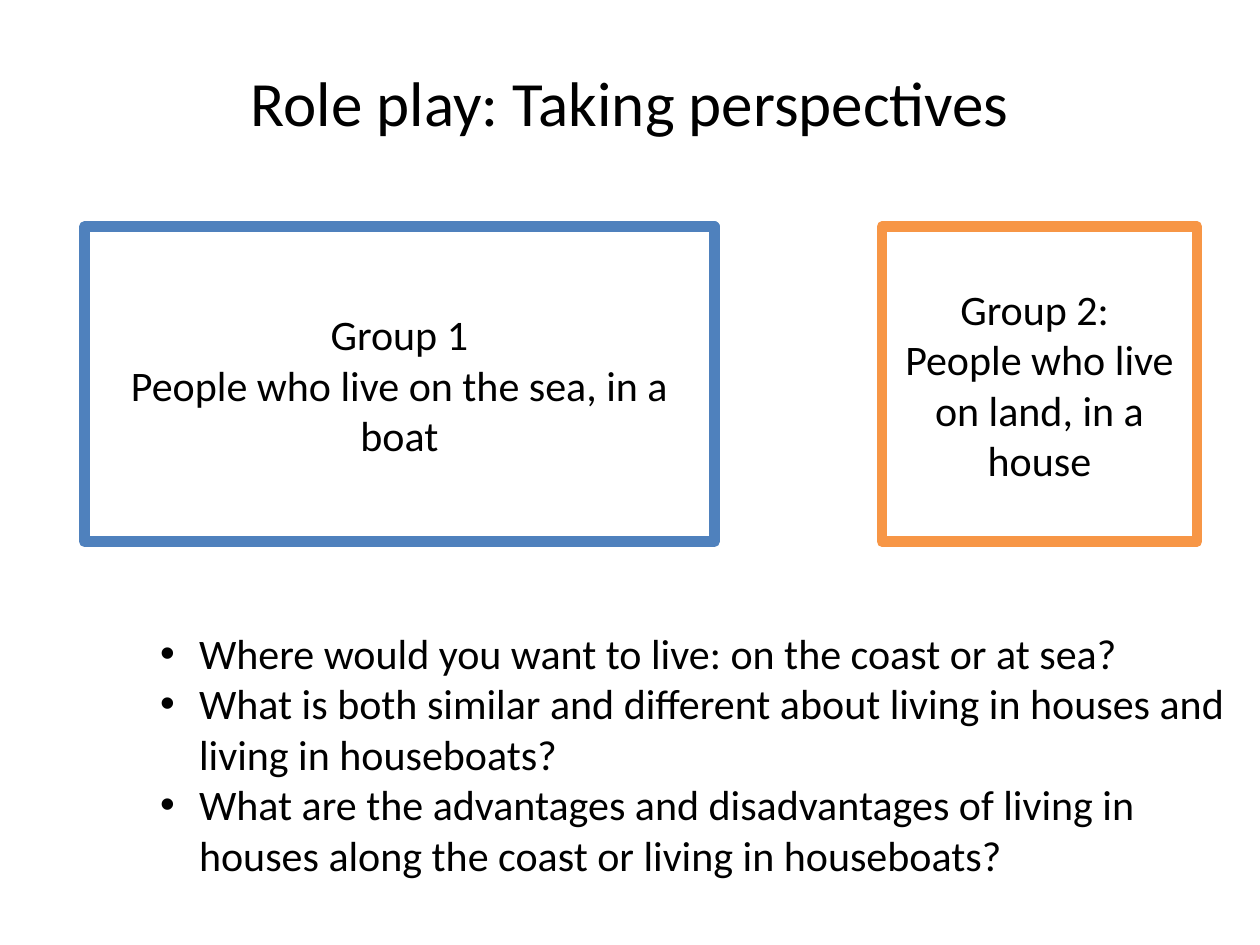
from lxml.etree import SubElement
from pptx import Presentation
from pptx.dml.color import RGBColor
from pptx.enum.shapes import MSO_SHAPE
from pptx.enum.text import MSO_ANCHOR, MSO_AUTO_SIZE, PP_ALIGN
from pptx.oxml.ns import qn
from pptx.util import Inches, Pt

BLACK = RGBColor(0x00, 0x00, 0x00)
WHITE = RGBColor(0xFF, 0xFF, 0xFF)
BLUE = RGBColor(0x4F, 0x81, 0xBD)
ORANGE = RGBColor(0xF7, 0x96, 0x46)

LEFT = Inches(0.67)
BOX_TOP = Inches(1.8)
BOX_SIDE = Inches(2.5)

GROUPS = [
    (LEFT, 2 * BOX_SIDE, BLUE,
     ["Group 1", "People who live on the sea, in a boat"]),
    (Inches(7), BOX_SIDE, ORANGE,
     ["Group 2: ", "People who live on land, in a house"]),
]
QUESTIONS = [
    "Where would you want to live: on the coast or at sea?",
    "What is both similar and different about living in houses and living in houseboats?",
    "What are the advantages and disadvantages of living in houses along the coast "
    "or living in houseboats?",
]


def place(sp, left, top, width, height):
    sp.left, sp.top, sp.width, sp.height = left, top, width, height


def write(tf, lines, size, align):
    """Fill a text frame with one paragraph per line."""
    tf.word_wrap = True
    tf.auto_size = MSO_AUTO_SIZE.NONE
    for i, line in enumerate(lines):
        p = tf.paragraphs[0] if i == 0 else tf.add_paragraph()
        p.alignment = align
        p.space_before = Pt(0)
        r = p.add_run()
        r.text = line
        r.font.name = "Calibri"
        r.font.size = Pt(size)
        r.font.color.rgb = BLACK


prs = Presentation()
prs.slide_width = Inches(10)
prs.slide_height = Inches(7.5)
s = prs.slides.add_slide(prs.slide_layouts[1])

# Title
title = s.shapes.title
place(title, Inches(0.5), Inches(0.38), Inches(9), Inches(0.85))
title.text_frame.vertical_anchor = MSO_ANCHOR.MIDDLE
write(title.text_frame, ["Role play: Taking perspectives"], 36, PP_ALIGN.CENTER)

# Discussion questions
body = s.placeholders[1]
place(body, LEFT, Inches(4.93), Inches(9.15), Inches(2.12))
write(body.text_frame, QUESTIONS, 24, PP_ALIGN.LEFT)
for p in body.text_frame.paragraphs:
    p.level = 1
    pPr = p._p.get_or_add_pPr()
    pPr.set("marL", str(Inches(0.81)))
    pPr.set("indent", str(Inches(-0.31)))
    SubElement(pPr, qn("a:buFont"), typeface="Arial")
    SubElement(pPr, qn("a:buChar"), char="•")

# Group boxes
for left, width, color, lines in GROUPS:
    box = s.shapes.add_shape(MSO_SHAPE.RECTANGLE, left, BOX_TOP, width, BOX_SIDE)
    box.shadow.inherit = False
    box.fill.solid()
    box.fill.fore_color.rgb = WHITE
    box.line.color.rgb = color
    box.line.width = Pt(6)
    box.text_frame.vertical_anchor = MSO_ANCHOR.MIDDLE
    write(box.text_frame, lines, 24, PP_ALIGN.CENTER)

prs.save("out.pptx")
